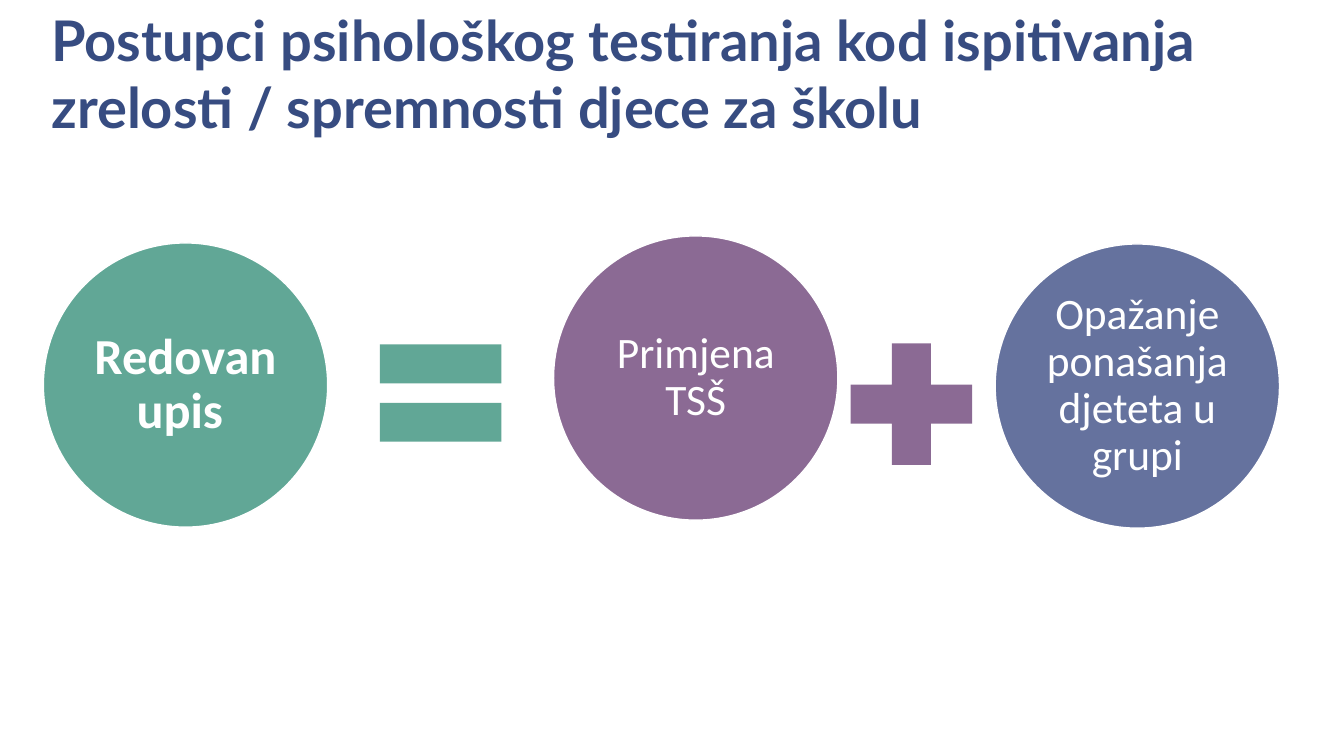
from pptx import Presentation, util as u
from pptx.dml.color import RGBColor
from pptx.enum import shapes, text

WHITE = RGBColor(0xFF, 0xFF, 0xFF)
NAVY = RGBColor(0x37, 0x4C, 0x81)
GREEN = RGBColor(0x61, 0xA7, 0x96)
PURPLE = RGBColor(0x8B, 0x6A, 0x94)
BLUE = RGBColor(0x65, 0x72, 0x9E)
CIRCLE_SIZE = 2.82
SIGN_SIZE = 1.64


class EquationSlide:
    """Draws a title and an equation of circles and signs on one slide."""

    title_style = {"name": "Lato", "size": u.Pt(40), "bold": True}
    term_style = {"name": "Calibri", "size": u.Pt(31), "bold": False}
    result_style = {"name": "Calibri", "size": u.Pt(36), "bold": True}

    def __init__(self, deck):
        self.page = deck.slides.add_slide(deck.slide_layouts[5])

    def label(self, box, words, style, color, frame_format, para_format):
        frame = box.text_frame
        para = frame.paragraphs[0]
        span = para.add_run()
        span.text = words
        span.font.color.rgb = color
        for target, values in ((frame, frame_format), (para, para_format), (span.font, style)):
            for name, value in values.items():
                setattr(target, name, value)

    def title(self, words, left, top, width, height):
        box = self.page.shapes.title
        box.left, box.top, box.width, box.height = map(u.Inches, (left, top, width, height))
        self.label(box, words, self.title_style, NAVY,
                   {"vertical_anchor": text.MSO_ANCHOR.TOP, "word_wrap": True,
                    "auto_size": text.MSO_AUTO_SIZE.NONE},
                   {"alignment": text.PP_ALIGN.LEFT})

    def shape(self, kind, left, top, size, color):
        box = self.page.shapes.add_shape(kind, *map(u.Inches, (left, top, size, size)))
        box.shadow.inherit = False
        box.fill.solid()
        box.fill.fore_color.rgb = color
        box.line.fill.background()
        return box

    def circle(self, words, left, top, color, style, inset=0.04):
        box = self.shape(shapes.MSO_SHAPE.OVAL, left, top, CIRCLE_SIZE, color)
        box.line.color.rgb = WHITE
        box.line.width = u.Pt(1)
        sides = ("left", "top", "right", "bottom")
        frame_format = {f"margin_{side}": u.Inches(inset) for side in sides}
        frame_format |= {"vertical_anchor": text.MSO_ANCHOR.MIDDLE, "word_wrap": True}
        self.label(box, words, style, WHITE, frame_format,
                   {"alignment": text.PP_ALIGN.CENTER, "line_spacing": 0.9})

    def sign(self, kind, left, top, color):
        self.shape(kind, left, top, SIGN_SIZE, color)


def main():
    deck = Presentation()
    deck.slide_width, deck.slide_height = u.Inches(13.33), u.Inches(7.5)
    slide = EquationSlide(deck)
    slide.title("Postupci psihološkog testiranja kod ispitivanja zrelosti / spremnosti djece za školu",
                0.41, 0, 12.11, 1.45)
    slide.circle("Primjena TSŠ", 5.49, 2.34, PURPLE, slide.term_style)
    slide.sign(shapes.MSO_SHAPE.MATH_PLUS, 8.22, 3.19, PURPLE)
    slide.circle("Opažanje ponašanja djeteta u grupi", 9.87, 2.42, BLUE, slide.term_style)
    slide.sign(shapes.MSO_SHAPE.MATH_EQUAL, 3.55, 3.08, GREEN)
    slide.circle("Redovan upis ", 0.43, 2.41, GREEN, slide.result_style, inset=0.05)
    deck.save("out.pptx")


if __name__ == "__main__":
    main()
